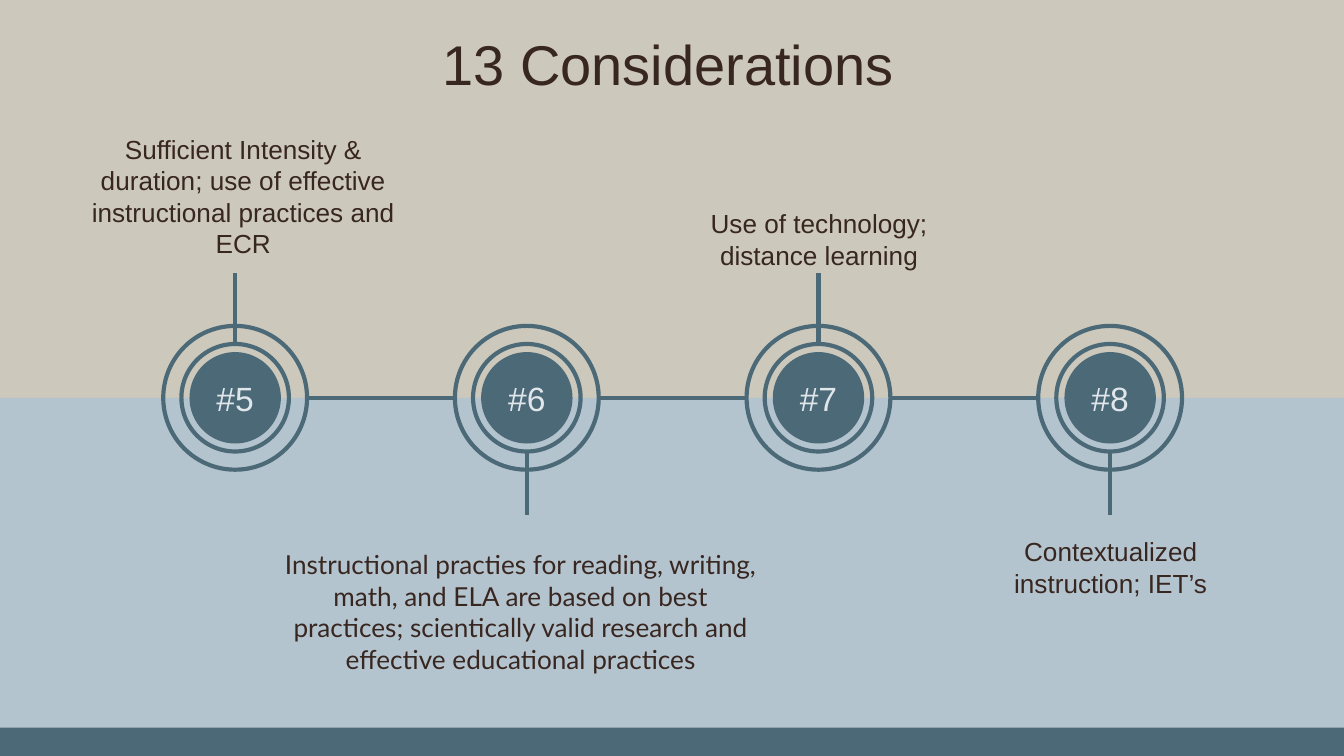
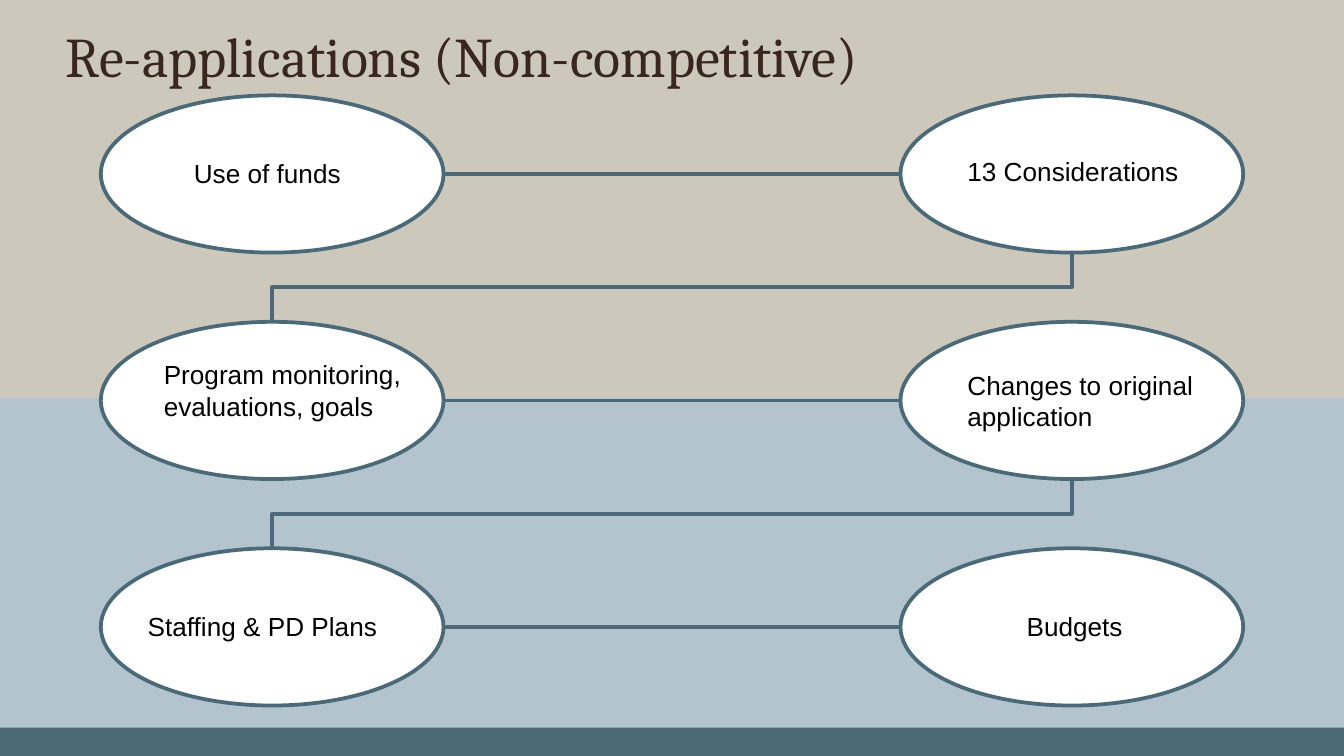
from lxml import etree
from pptx import Presentation, util as u
from pptx.dml.color import RGBColor
from pptx.enum import shapes, text
from pptx.oxml.ns import qn

# Shared look
W, H = 10, 5.625
COLORS = {"sand": "CCC8BC", "sky": "B4C4CE", "teal": "4B6977",
          "ink": "382620", "pale": "E1E6EB", "white": "FFFFFF", "black": "000000"}
HORIZON = 2.96
FOOTER = 0.21

# Timeline grid: node centres
NODE_X, NODE_STEP = 1.75, 2.17
RING, INNER, DISC = 1.07, 0.8, 0.68
STEM_UP, STEM_DOWN = 2.03, 3.83

# Flow grid: two columns, three rows
COL_X, COL_STEP = 0.75, 5.95
ROW_Y, ROW_STEP = 0.71, 1.685
OVAL_W, OVAL_H = 2.55, 1.17

OVAL = shapes.MSO_SHAPE.OVAL
FLOW_OVAL = shapes.MSO_SHAPE.FLOWCHART_CONNECTOR
STRAIGHT = shapes.MSO_CONNECTOR.STRAIGHT
ELBOW = shapes.MSO_CONNECTOR.ELBOW
CENTER, LEFT = text.PP_ALIGN.CENTER, text.PP_ALIGN.LEFT


def rgb(name):
    return RGBColor.from_string(COLORS[name])


def inches(*values):
    return [u.Inches(v) for v in values]


def write(sp, words, size=14, font="Arial", color="ink", align=CENTER,
          anchor=text.MSO_ANCHOR.MIDDLE, inset=0.1, wrap=True, grow=False):
    """Put one formatted paragraph into a shape."""
    tf = sp.text_frame
    tf.word_wrap = wrap
    tf.auto_size = text.MSO_AUTO_SIZE.SHAPE_TO_FIT_TEXT if grow else text.MSO_AUTO_SIZE.NONE
    tf.vertical_anchor = anchor
    tf.margin_left = tf.margin_right = u.Inches(0.1)
    tf.margin_top = tf.margin_bottom = u.Inches(inset)
    p = tf.paragraphs[0]
    p.alignment = align
    r = p.add_run()
    r.text = words
    r.font.size, r.font.name = u.Pt(size), font
    r.font.color.rgb = rgb(color)


def add_shape(s, kind, box, fill=None, line=None):
    sp = s.shapes.add_shape(kind, *inches(*box))
    sp.shadow.inherit = False
    if fill:
        sp.fill.solid()
        sp.fill.fore_color.rgb = rgb(fill)
    else:
        sp.fill.background()
    if line:
        sp.line.color.rgb, sp.line.width = rgb("teal"), u.Pt(line)
    else:
        sp.line.fill.background()
    return sp


def add_circle(s, cx, size, **look):
    return add_shape(s, OVAL, (cx - size / 2, HORIZON - size / 2, size, size), **look)


def add_line(s, start, end, width=2.25, kind=STRAIGHT):
    c = s.shapes.add_connector(kind, *inches(*start, *end))
    c.line.color.rgb, c.line.width = rgb("teal"), u.Pt(width)
    etree.SubElement(c.element.spPr, qn("a:effectLst"))
    return c


def add_drop(s, start, end, width):
    """Elbow that leaves downwards: a sideways elbow turned by 90 degrees."""
    (x1, y1), (x2, y2) = start, end
    cx, cy = (x1 + x2) / 2, (y1 + y2) / 2
    dx, dy = (y2 - y1) / 2, (x1 - x2) / 2
    c = add_line(s, (cx - dx, cy - dy), (cx + dx, cy + dy), width, ELBOW)
    c.element.spPr.xfrm.rot = 90


def add_label(s, words, box, **style):
    write(s.shapes.add_textbox(*inches(*box)), words, **style)


def add_slide(prs, title, box, **style):
    s = prs.slides.add_slide(prs.slide_layouts[5])
    sp = s.shapes.title
    sp.left, sp.top, sp.width, sp.height = inches(*box)
    write(sp, title, size=30, **style)
    return s


def add_bands(s):
    """Draw the bands and move them to the layout, behind the title."""
    tree = s.slide_layout.shapes.element
    bands = [(HORIZON, H - HORIZON, "sky"), (H - FOOTER, FOOTER, "teal")]
    for i, (top, height, fill) in enumerate(bands):
        sp = add_shape(s, shapes.MSO_SHAPE.RECTANGLE, (0, top, W, height), fill=fill)
        tree.insert(2 + i, sp.element)


def considerations(prs):
    s = add_slide(prs, "13 Considerations", (0, 0.17, 9.94, 0.6))
    add_bands(s)
    nodes = [
        ("#5", "Sufficient Intensity & duration; use of effective instructional practices and ECR",
         (0.45, 1.21, 2.72, 0.5), "Arial"),
        ("#6", "Instructional practies for reading, writing, math, and ELA are based on best "
         "practices; scientically valid research and effective educational practices",
         (2.01, 4.16, 3.73, 0.78), "Lato"),
        ("#7", "Use of technology; distance learning", (4.93, 1.53, 2.33, 0.5), "Arial"),
        ("#8", "Contextualized instruction; IET’s", (7.1, 3.97, 2.33, 0.5), "Arial"),
    ]
    for i, (number, words, box, font) in enumerate(nodes):
        cx = NODE_X + i * NODE_STEP
        if i:
            add_line(s, (cx - NODE_STEP + RING / 2, HORIZON), (cx - RING / 2, HORIZON))
        # Stems alternate: up, down
        side, tip = (1, STEM_DOWN) if i % 2 else (-1, STEM_UP)
        add_line(s, (cx, HORIZON + side * INNER / 2), (cx, tip))
        for size in (RING, INNER):
            add_circle(s, cx, size, line=2.25)
        add_label(s, words, box, font=font)
        write(add_circle(s, cx, DISC, fill="teal"), number, size=18, color="pale", wrap=False)


def reapplications(prs):
    s = add_slide(prs, "Re-applications (Non-competitive)", (0.39, 0.11, 7.96, 0.6),
                  font="Cambria", align=LEFT)
    # Ovals and the path through them
    right = COL_X + COL_STEP
    mid_left, mid_right = COL_X + OVAL_W / 2, right + OVAL_W / 2
    for row in range(3):
        y = ROW_Y + row * ROW_STEP
        for x in (COL_X, right):
            add_shape(s, FLOW_OVAL, (x, y, OVAL_W, OVAL_H), fill="white", line=2)
        cy = y + OVAL_H / 2
        add_line(s, (COL_X + OVAL_W, cy), (right, cy), 2, ELBOW)
        if row < 2:
            add_drop(s, (mid_right, y + OVAL_H), (mid_left, y + ROW_STEP), 2)
    # Oval labels
    labels = [
        ("Use of funds", (1.06, 1.12, 1.86, 0.34), CENTER),
        ("13 Considerations", (7.1, 1.11, 1.86, 0.34), LEFT),
        ("Changes to original application", (7.1, 2.7, 2.13, 0.57), LEFT),
        ("Program monitoring, evaluations, goals", (1.12, 2.62, 1.98, 0.57), LEFT),
        ("Staffing & PD Plans", (1, 4.49, 2.05, 0.34), LEFT),
        ("Budgets", (7.54, 4.49, 1.54, 0.34), LEFT),
    ]
    for words, box, align in labels:
        add_label(s, words, box, align=align, color="black", inset=0.05,
                  anchor=text.MSO_ANCHOR.TOP, grow=True)


def main():
    prs = Presentation()
    prs.slide_width, prs.slide_height = inches(W, H)
    fill = prs.slide_master.background.fill
    fill.solid()
    fill.fore_color.rgb = rgb("sand")
    considerations(prs)
    reapplications(prs)
    prs.save("out.pptx")


if __name__ == "__main__":
    main()
